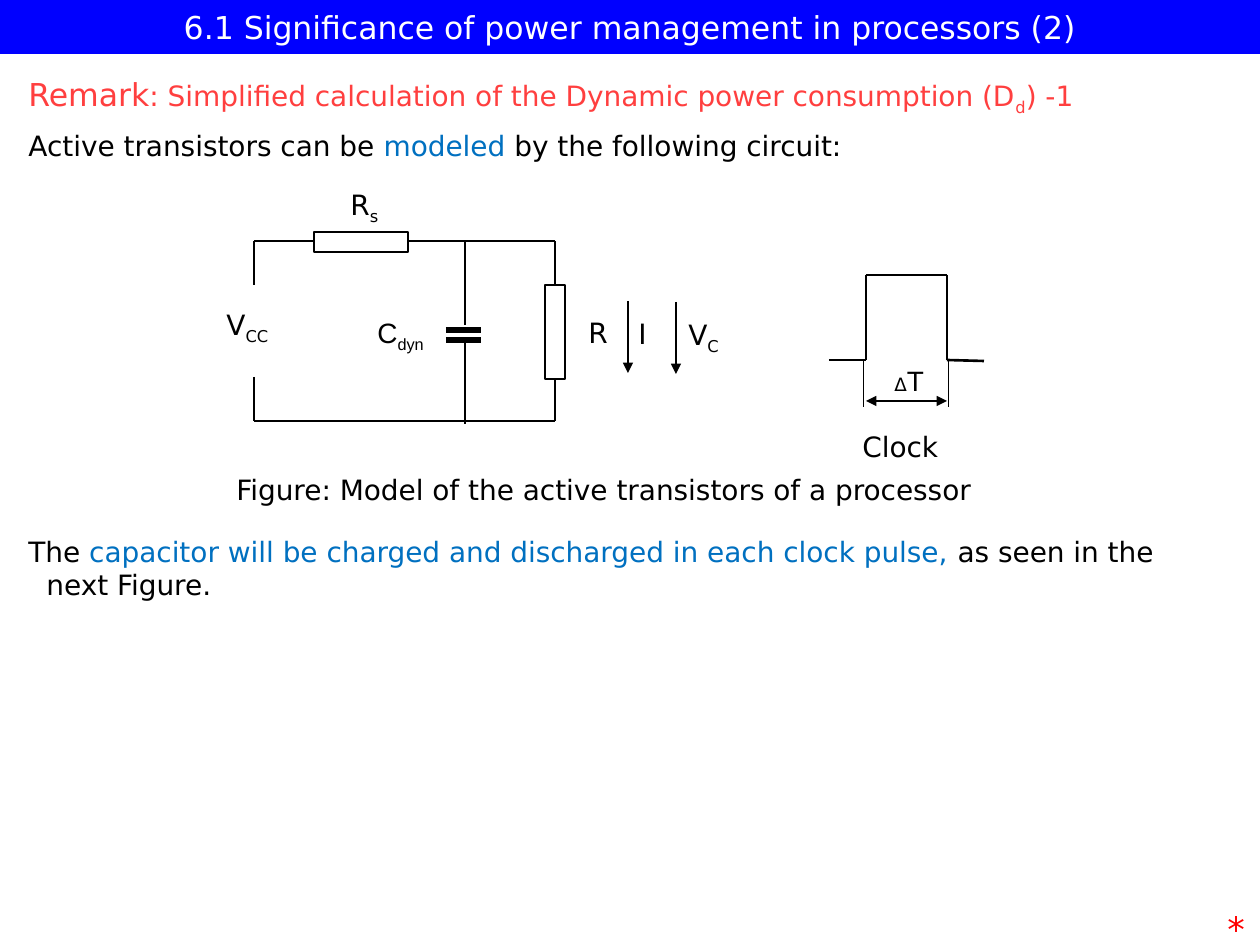
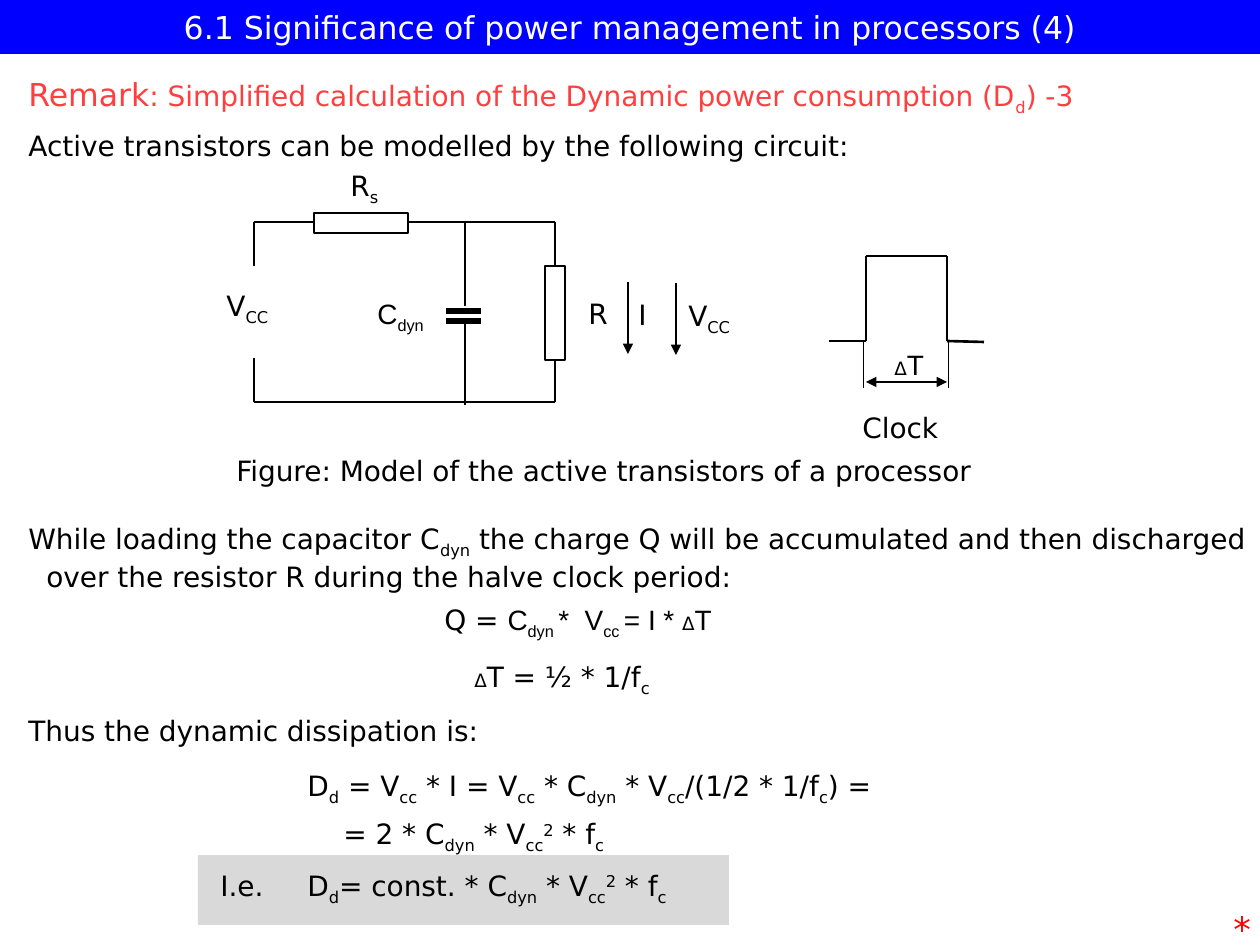
import pptx
import pptx.dml.color
import pptx.enum.dml
import pptx.enum.shapes
import pptx.enum.text
import pptx.oxml
import pptx.oxml.ns
import pptx.util

SCALE = 914400 / 126
SLIDE_WIDTH, SLIDE_HEIGHT = 1260, 945
LINE_BOX_HEIGHT = 47
TEXT_LEFT = 16
CIRCUIT_LEFT = 254

BLACK = pptx.dml.color.RGBColor(0x00, 0x00, 0x00)
WHITE = pptx.dml.color.RGBColor(0xFF, 0xFF, 0xFF)
BAND_BLUE = pptx.dml.color.RGBColor(0x00, 0x00, 0xFF)
ACCENT_BLUE = pptx.dml.color.RGBColor(0x00, 0x70, 0xC0)
REMARK_RED = pptx.dml.color.RGBColor(0xFF, 0x3F, 0x3F)
STAR_RED = pptx.dml.color.RGBColor(0xFF, 0x00, 0x00)
GRAY = pptx.dml.color.RGBColor(0xD9, 0xD9, 0xD9)

BODY = {"name": "DejaVu Sans", "size": pptx.util.Pt(16), "color": BLACK}
HEADING = {"size": pptx.util.Pt(18)}
ARIAL = {"name": "Arial"}
ACCENT = {"color": ACCENT_BLUE}
REMARK = {"color": REMARK_RED}
STAR = {"color": STAR_RED, "size": pptx.util.Pt(20)}
SUPERSCRIPT = {"baseline": 30000}
SUBSCRIPT = {"baseline": -25000}
SMALL = {"size": pptx.util.Pt(10.5)}
DELTA = ("Δ", SMALL)
SQUARED = ("2", SUPERSCRIPT)


def px(length):
    """Turn a length in px into EMU."""
    return pptx.util.Emu(round(length * SCALE))


def add_run(paragraph, text, formats):
    """Add one run formatted as body text with the given changes."""
    run = paragraph.add_run()
    run.text = text
    for name, value in {**BODY, **formats}.items():
        if name == "color":
            run.font.color.rgb = value
        elif name == "baseline":
            run.font._element.set("baseline", str(value))
        else:
            setattr(run.font, name, value)


def write_runs(paragraph, pieces):
    """Write strings or (text, formats) pairs; tildes enclose subscripts."""
    for piece in pieces:
        text, formats = (piece, {}) if isinstance(piece, str) else piece
        for index, part in enumerate(text.split("~")):
            if part:
                add_run(paragraph, part, {**formats, **(SUBSCRIPT if index % 2 else {})})


def add_text(slide, left, top, width, *lines, indent=0, space_after=0):
    """Add a text box with one paragraph per line, indented after the first."""
    shape = slide.shapes.add_textbox(px(left), px(top), px(width), px(LINE_BOX_HEIGHT * len(lines)))
    frame = shape.text_frame
    frame.word_wrap = True
    for index, pieces in enumerate(lines):
        paragraph = frame.add_paragraph() if index else frame.paragraphs[0]
        paragraph.space_after = pptx.util.Pt(space_after)
        if index and indent:
            paragraph._p.get_or_add_pPr().set("marL", str(px(indent)))
        write_runs(paragraph, pieces)


def add_line(slide, start, end, width=1.5, arrows=()):
    """Add a black line with arrowheads at the named ends."""
    connector = slide.shapes.add_connector(
        pptx.enum.shapes.MSO_CONNECTOR.STRAIGHT, *map(px, (*start, *end)))
    connector.line.color.rgb = BLACK
    connector.line.width = pptx.util.Pt(width)
    for arrow in arrows:
        head = pptx.oxml.ns.qn(f"a:{arrow}")
        connector.line._get_or_add_ln().makeelement(head)
        element = pptx.oxml.parse_xml(
            f'<a:{arrow} {pptx.oxml.ns.nsdecls("a")} type="triangle"/>')
        connector.line._get_or_add_ln().append(element)
    effects = pptx.oxml.parse_xml(f'<a:effectLst {pptx.oxml.ns.nsdecls("a")}/>')
    connector._element.spPr.append(effects)


def add_box(slide, left, top, width, height, fill, outlined=False):
    """Add a plain rectangle, with a black outline if asked."""
    shape = slide.shapes.add_shape(
        pptx.enum.shapes.MSO_SHAPE.RECTANGLE, *map(px, (left, top, width, height)))
    shape.shadow.inherit = False
    shape.fill.solid()
    shape.fill.fore_color.rgb = fill
    if outlined:
        shape.line.color.rgb = BLACK
        shape.line.width = pptx.util.Pt(1.5)
    else:
        shape.line.fill.background()


def add_circuit(slide, left, top, output_voltage):
    """Draw the transistor circuit from its top left corner."""
    def at(x, y):
        return left + x, top + y

    right, bottom, capacitor = 301, 180, 211
    wires = [
        ((0, 0), (right, 0)), ((0, bottom), (right, bottom)),
        ((0, 0), (0, 44)), ((0, 136), (0, bottom)),
        ((right, 0), (right, 44)), ((right, 139), (right, bottom)),
        ((capacitor, 0), (capacitor, 84)), ((capacitor, 99), (capacitor, 183)),
    ]
    for start, end in wires:
        add_line(slide, at(*start), at(*end))
    for plate in (89, 99):
        add_line(slide, at(192, plate), at(227, plate), width=3)
    for x, y, width, height in ((60, -9, 94, 20), (291, 44, 20, 94)):
        add_box(slide, *at(x, y), width, height, WHITE, outlined=True)
    for x, y in ((374, 60), (422, 61)):
        add_line(slide, at(x, y), at(x, y + 72), arrows=["tailEnd"])
    labels = [
        (84, -60, 62, "R~s~"), (-40, 60, 72, "V~CC~"), (111, 68, 123, ("C~dyn~", ARIAL)),
        (322, 68, 45, "R"), (372, 69, 25, "I"), (422, 70, 91, output_voltage),
    ]
    for x, y, width, label in labels:
        add_text(slide, *at(x, y), width, [label])


def add_clock(slide, left, top, period_top):
    """Draw the clock pulse from its top left corner, with its period."""
    def at(x, y):
        return left + x, top + y

    width, base = 81, 85
    outline = [(-37, base), (0, base), (0, 0), (width, 0), (width, base), (118, base + 1)]
    for start, end in zip(outline, outline[1:]):
        add_line(slide, at(*start), at(*end))
    for x in (-3, width + 1):
        add_line(slide, at(x, base), at(x, base + 47), width=0.25)
    add_line(slide, at(0, 126), at(width, 126), arrows=["headEnd", "tailEnd"])
    add_text(slide, *at(16, period_top), 56, [DELTA, ("T", ARIAL)])
    add_text(slide, *at(-16, 148), 102, ["Clock"])


def add_figure(slide, top, output_voltage, period_top):
    """Place circuit, clock and caption around the circuit's top edge."""
    add_circuit(slide, CIRCUIT_LEFT, top, output_voltage)
    add_clock(slide, CIRCUIT_LEFT + 612, top + 34, period_top)
    add_text(slide, CIRCUIT_LEFT - 30, top + 225, 779,
             ["Figure: Model of the active transistors of a processor"])


def add_base_slide(presentation, number, part, intro, star_left):
    """Add a slide with title band, remark, introduction and corner star."""
    slide = presentation.slides.add_slide(presentation.slide_layouts[5])
    title = slide.shapes.title
    geometry = {"left": 0, "top": 0, "width": SLIDE_WIDTH, "height": 54}
    for name, value in geometry.items():
        setattr(title, name, px(value))
    title.fill.solid()
    title.fill.fore_color.rgb = BAND_BLUE
    frame = title.text_frame
    frame_formats = {
        "word_wrap": True,
        "auto_size": pptx.enum.text.MSO_AUTO_SIZE.NONE,
        "vertical_anchor": pptx.enum.text.MSO_ANCHOR.MIDDLE,
    }
    for name, value in frame_formats.items():
        setattr(frame, name, value)
    paragraph = frame.paragraphs[0]
    paragraph.alignment = pptx.enum.text.PP_ALIGN.CENTER
    add_run(paragraph, f"6.1 Significance of power management in processors ({number})",
            {**HEADING, "color": WHITE})
    add_text(slide, TEXT_LEFT, 69, 1154, [
        ("Remark", {**REMARK, **HEADING}),
        (f": Simplified calculation of the Dynamic power consumption (D~d~) -{part}", REMARK)])
    add_text(slide, TEXT_LEFT, 122, 878, intro)
    add_text(slide, star_left, 901, 48, [("*", STAR)])
    return slide


def add_model_slide(presentation):
    """Build the slide that introduces the circuit model."""
    intro = ["Active transistors can be ", ("modeled", ACCENT), " by the following circuit:"]
    slide = add_base_slide(presentation, 2, 1, intro, 1215)
    add_figure(slide, 241, "V~C~", 82)
    add_text(slide, TEXT_LEFT, 528, 1206,
             ["The ",
              ("capacitor will be charged and discharged in each clock pulse, ", ACCENT),
              "as seen in the"],
             ["next Figure."], indent=18)


def add_dissipation_slide(presentation):
    """Build the slide that derives the dynamic dissipation."""
    intro = ["Active transistors can be modelled by the following circuit:"]
    slide = add_base_slide(presentation, 4, 3, intro, 1221)
    add_figure(slide, 222, "V~CC~", 85)
    add_text(slide, TEXT_LEFT, 515, 1281,
             ["While loading the capacitor C~dyn~ the charge Q will be accumulated "
              "and then discharged"],
             ["over the resistor R during the halve clock period:"], indent=18)
    add_text(slide, 432, 596, 343,
             ["Q = ", ("C~dyn ~*  V~cc ~= I * ", ARIAL), DELTA, ("T", ARIAL)])
    add_text(slide, 462, 653, 215, [DELTA, "T = ½ * 1/f~c~"])
    add_text(slide, TEXT_LEFT, 707, 485, ["Thus the dynamic dissipation is:"])
    add_text(slide, 295, 762, 660,
             ["D~d~ = V~cc~ * I = V~cc~ * C~dyn~ * V~cc~/(1/2 * 1/f~c~) ="],
             ["= 2 * C~dyn~ * V~cc~", SQUARED, " * f~c~"], indent=36, space_after=6)
    add_box(slide, 198, 855, 531, 70, GRAY)
    add_text(slide, 208, 862, 74, ["I.e."])
    add_text(slide, 295, 862, 426, ["D~d~= const. * C~dyn~ * V~cc~", SQUARED, " * f~c~"])


def main():
    """Build and save the presentation."""
    presentation = pptx.Presentation()
    presentation.slide_width = px(SLIDE_WIDTH)
    presentation.slide_height = px(SLIDE_HEIGHT)
    add_model_slide(presentation)
    add_dissipation_slide(presentation)
    presentation.save("out.pptx")


if __name__ == "__main__":
    main()
